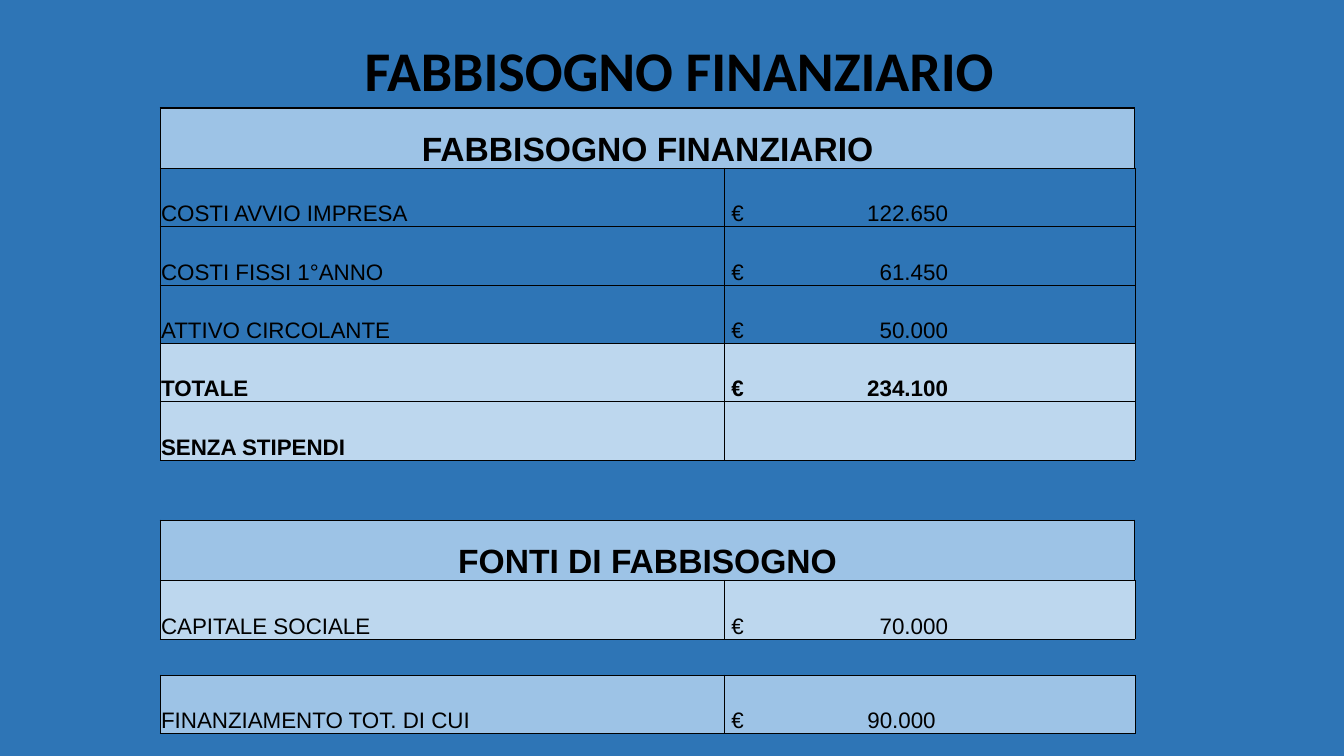
from dataclasses import dataclass

from lxml.etree import SubElement
from pptx import Presentation
from pptx.dml.color import RGBColor
from pptx.enum.text import MSO_ANCHOR as Anchor, MSO_AUTO_SIZE as AutoSize, PP_ALIGN as Align
from pptx.oxml.ns import qn
from pptx.util import Cm, Pt


@dataclass(frozen=True)
class Theme:
    background: str = "2E75B6"
    ink: str = "000000"
    strong: str = "9DC3E6"
    light: str = "BDD7EE"
    title_font: str = "Calibri"
    table_font: str = "Arial"
    title_size: int = 40
    heading_size: int = 24
    body_size: int = 16
    thin: float = 0.5
    thick: float = 1


@dataclass(frozen=True)
class Row:
    label: str = ""
    amount: str = ""
    fill: str = ""
    bold: bool = False
    heading: bool = False
    height: float = 1.47
    amount_tab: float = 5.46

    @property
    def is_gap(self):
        return not self.label


THEME = Theme()
NO_STYLE = "{2D5ABB26-0587-4C30-8999-92F81FD0307C}"
COLUMN_WIDTHS = (14.22, 10.34)
HEADING = dict(fill=THEME.strong, bold=True, heading=True, height=1.52)
ROWS = [
    Row("FABBISOGNO FINANZIARIO", **HEADING),
    Row("COSTI AVVIO IMPRESA", "122.650"),
    Row("COSTI FISSI 1°ANNO", "61.450"),
    Row("ATTIVO CIRCOLANTE", "50.000"),
    Row("TOTALE", "234.100", THEME.light, bold=True),
    Row("SENZA STIPENDI", "", THEME.light, bold=True),
    Row(height=1.52),
    Row("FONTI DI FABBISOGNO", **HEADING),
    Row("CAPITALE SOCIALE", "70.000", THEME.light),
    Row(height=0.91),
    Row("FINANZIAMENTO TOT. DI CUI", "90.000", THEME.strong, amount_tab=5.15),
]


def write_text(frame, text, size=THEME.body_size, font=THEME.table_font,
               bold=False, align=Align.LEFT):
    paragraph = frame.paragraphs[0]
    paragraph.alignment = align
    run = paragraph.add_run()
    run.text = text
    run.font.size = Pt(size)
    run.font.name = font
    run.font.bold = bold
    run.font.color.rgb = RGBColor.from_string(THEME.ink)
    return paragraph


def add_right_tab(paragraph, position):
    properties = paragraph._p.get_or_add_pPr()
    tabs = SubElement(properties, qn("a:tabLst"))
    SubElement(tabs, qn("a:tab"), pos=str(Cm(position)), algn="r")


def set_borders(cell, weights):
    """Draw the sides named in weights (L, R, T, B), in points."""
    properties = cell._tc.get_or_add_tcPr()
    for side, weight in weights.items():
        line = SubElement(properties, qn(f"a:ln{side}"), w=str(Pt(weight)))
        fill = SubElement(line, qn("a:solidFill"))
        SubElement(fill, qn("a:srgbClr"), val=THEME.ink)


def border_weights(index):
    """Edges that touch a heading are thick, and gap rows have open sides."""
    def weight(*indexes):
        touches = any(ROWS[i].heading for i in indexes if 0 <= i < len(ROWS))
        return THEME.thick if touches else THEME.thin

    edges = {"T": weight(index - 1, index), "B": weight(index, index + 1)}
    if ROWS[index].is_gap:
        return edges
    return {"L": weight(index), "R": weight(index), **edges}


def format_cell(cell, row, weights):
    cell.vertical_anchor = Anchor.BOTTOM
    cell.margin_left = cell.margin_right = cell.margin_top = Cm(0.02)
    cell.margin_bottom = 0
    set_borders(cell, weights)
    if row.fill:
        cell.fill.solid()
        cell.fill.fore_color.rgb = RGBColor.from_string(row.fill)
    else:
        cell.fill.background()


def fill_row(table, index, row):
    label_cell, amount_cell = table.cell(index, 0), table.cell(index, 1)
    for cell in (label_cell, amount_cell):
        format_cell(cell, row, border_weights(index))
    if row.heading:
        label_cell.merge(amount_cell)
        write_text(label_cell.text_frame, row.label, size=THEME.heading_size,
                   bold=True, align=Align.CENTER)
    elif row.label:
        write_text(label_cell.text_frame, row.label, bold=row.bold)
    if row.amount:
        amount_cell.margin_left = Cm(0.17)
        paragraph = write_text(amount_cell.text_frame, f"€\t{row.amount}", bold=row.bold)
        add_right_tab(paragraph, row.amount_tab)


def add_title(slide, text):
    box = slide.shapes.add_textbox(Cm(8.76), Cm(0.76), Cm(16.71), Cm(1.96))
    frame = box.text_frame
    frame.word_wrap = True
    frame.auto_size = AutoSize.SHAPE_TO_FIT_TEXT
    write_text(frame, text, size=THEME.title_size, font=THEME.title_font,
               bold=True, align=Align.CENTER)


def add_finance_table(slide):
    height = sum(row.height for row in ROWS)
    frame = slide.shapes.add_table(len(ROWS), len(COLUMN_WIDTHS), Cm(4.04), Cm(2.72),
                                   Cm(sum(COLUMN_WIDTHS)), Cm(height))
    table = frame.table
    table.first_row = table.horz_banding = False
    table._tbl.tblPr.find(qn("a:tableStyleId")).text = NO_STYLE
    for column, width in zip(table.columns, COLUMN_WIDTHS):
        column.width = Cm(width)
    for index, row in enumerate(ROWS):
        table.rows[index].height = Cm(row.height)
        fill_row(table, index, row)


def main():
    presentation = Presentation()
    presentation.slide_width, presentation.slide_height = Cm(33.87), Cm(19.05)
    slide = presentation.slides.add_slide(presentation.slide_layouts[6])

    # Background
    background = slide.background.fill
    background.solid()
    background.fore_color.rgb = RGBColor.from_string(THEME.background)

    # Content
    add_title(slide, "FABBISOGNO FINANZIARIO")
    add_finance_table(slide)
    presentation.save("out.pptx")


if __name__ == "__main__":
    main()
